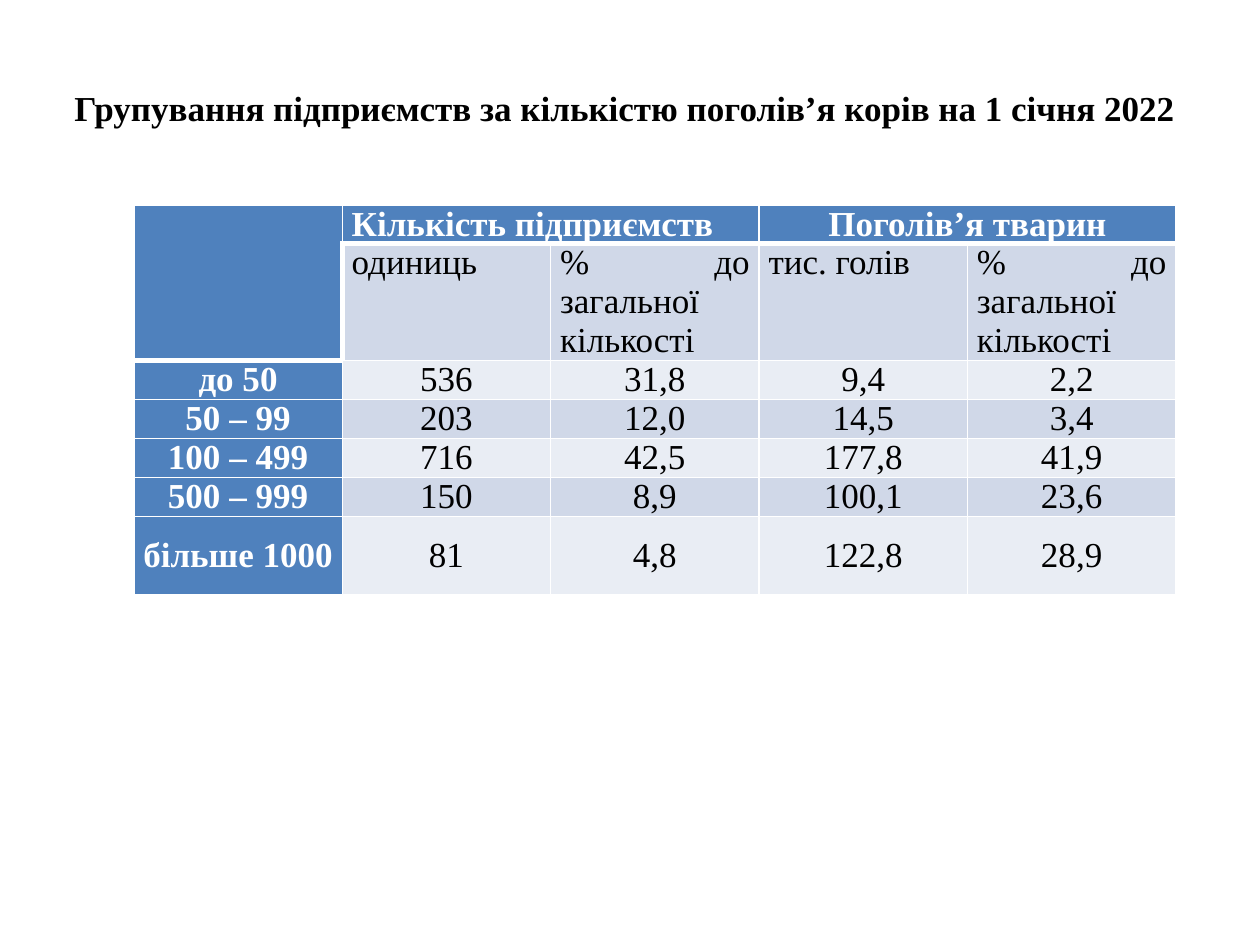
from lxml.etree import SubElement
from pptx import Presentation
from pptx.dml.color import RGBColor
from pptx.enum.text import MSO_ANCHOR, PP_ALIGN
from pptx.oxml.ns import qn
from pptx.util import Pt

FONT = "Times New Roman"
TEXT_SIZE = 20
WHITE, BLACK = "FFFFFF", "000000"
HEADER_FILL = "4F81BD"
BAND_FILLS = ("E9EDF4", "D0D8E8")
COLUMN_WIDTH = 119.1
ROW_HEIGHTS = (22.2, 66.8, 22.3, 22.3, 22.3, 22.3, 44.5)
ROWS = (
    ("", "Кількість підприємств", "", "Поголів’я тварин", ""),
    ("", "одиниць", "% до загальної кількості", "тис. голів", "% до загальної кількості"),
    ("до 50", "536", "31,8", "9,4", "2,2"),
    ("50 – 99", "203", "12,0", "14,5", "3,4"),
    ("100 – 499", "716", "42,5", "177,8", "41,9"),
    ("500 – 999", "150", "8,9", "100,1", "23,6"),
    ("більше 1000", "81", "4,8", "122,8", "28,9"),
)
MERGES = (((0, 0), (1, 0)), ((0, 1), (0, 2)), ((0, 3), (0, 4)))


def color(hex_string):
    return RGBColor.from_string(hex_string)


def style_paragraph(paragraph, hex_string, bold, alignment):
    paragraph.alignment = alignment
    font = paragraph.font
    font.name, font.size, font.bold = FONT, Pt(TEXT_SIZE), bold
    font.color.rgb = color(hex_string)


def add_title(slide, text):
    box = slide.shapes.add_textbox(Pt(0), Pt(44.6), Pt(684), Pt(55.4))
    frame = box.text_frame
    frame.word_wrap = True
    frame.margin_top = Pt(5)
    paragraph = frame.paragraphs[0]
    paragraph.text = text
    style_paragraph(paragraph, BLACK, True, PP_ALIGN.LEFT)
    paragraph._p.get_or_add_pPr().set("indent", str(Pt(35.4)))


def set_borders(cell, widths):
    """Draw white borders; widths maps L, R, T and B to points."""
    properties = cell._tc.get_or_add_tcPr()
    for side, width in widths.items():
        line = SubElement(properties, qn(f"a:ln{side}"), w=str(Pt(width)))
        fill = SubElement(line, qn("a:solidFill"))
        SubElement(fill, qn("a:srgbClr"), val=WHITE)


def border_widths(row, column):
    """Thick lines set the header block off from the body."""
    header_end = 1 if column == 0 else 0
    return {
        "L": 3 if (row, column) == (1, 1) else 1,
        "R": 3 if (row, column) == (1, 0) else 1,
        "T": 3 if row == header_end + 1 else 1,
        "B": 3 if row == header_end or (row, column) == (0, 0) else 1,
    }


def fill_cell(cell, row, column, text):
    is_header = row == 0 or column == 0
    is_justified = row == 1 or (row, column) == (0, 1)
    cell.margin_left = cell.margin_right = Pt(5.4)
    cell.margin_top = cell.margin_bottom = Pt(0)
    cell.vertical_anchor = MSO_ANCHOR.TOP if row < 2 else MSO_ANCHOR.MIDDLE
    set_borders(cell, border_widths(row, column))
    cell.fill.solid()
    cell.fill.fore_color.rgb = color(HEADER_FILL if is_header else BAND_FILLS[row % 2])
    cell.text = text
    style_paragraph(
        cell.text_frame.paragraphs[0],
        WHITE if is_header else BLACK,
        is_header,
        PP_ALIGN.JUSTIFY if is_justified else PP_ALIGN.CENTER,
    )


def add_herd_table(slide):
    column_count = len(ROWS[0])
    table = slide.shapes.add_table(
        len(ROWS), column_count, Pt(76.5), Pt(117),
        Pt(COLUMN_WIDTH * column_count), Pt(sum(ROW_HEIGHTS)),
    ).table
    for column in table.columns:
        column.width = Pt(COLUMN_WIDTH)
    for row, height in zip(table.rows, ROW_HEIGHTS):
        row.height = Pt(height)
    for row, texts in enumerate(ROWS):
        for column, text in enumerate(texts):
            fill_cell(table.cell(row, column), row, column, text)
    for first, last in MERGES:
        table.cell(*first).merge(table.cell(*last))


def main():
    presentation = Presentation()
    presentation.slide_width, presentation.slide_height = Pt(720), Pt(540)
    slide = presentation.slides.add_slide(presentation.slide_layouts[6])
    add_herd_table(slide)
    add_title(slide, "Групування підприємств за кількістю поголів’я корів на 1 січня 2022")
    presentation.save("out.pptx")


if __name__ == "__main__":
    main()
